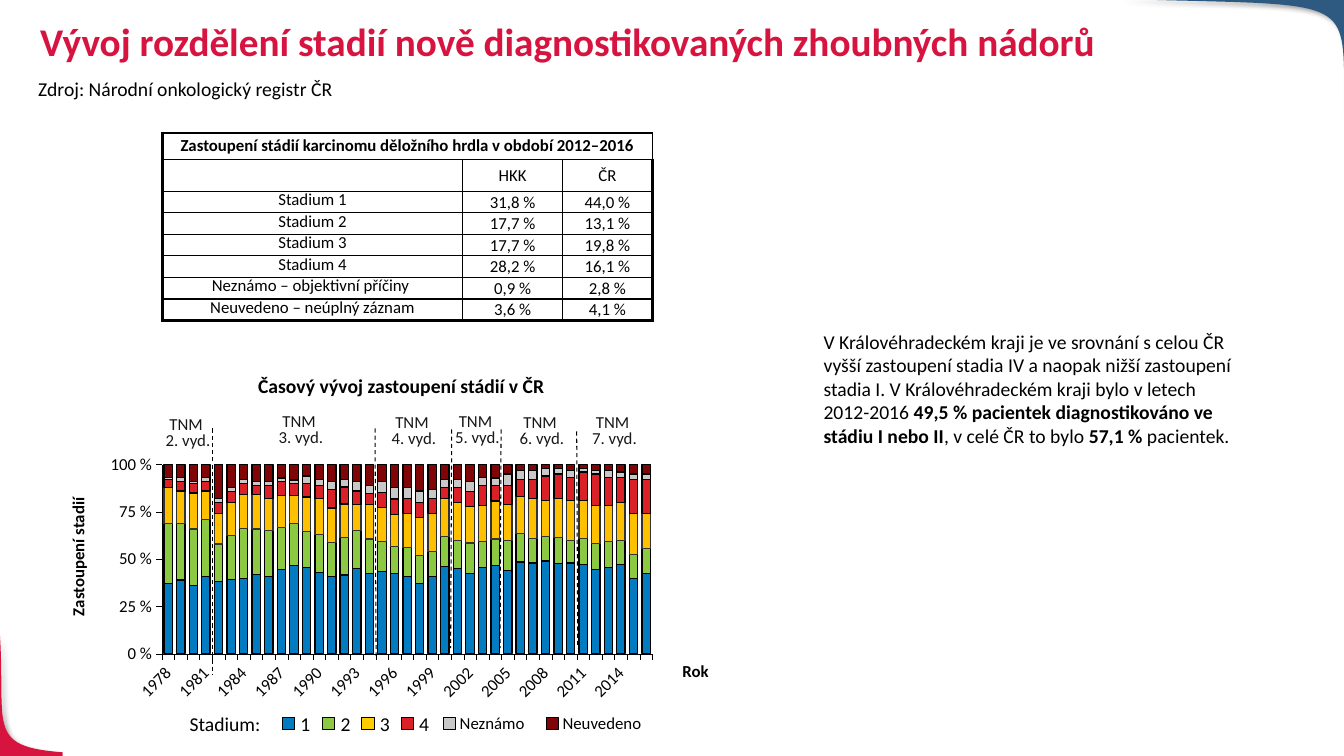
from lxml import etree
from pptx import Presentation
from pptx.chart.data import CategoryChartData
from pptx.dml.color import RGBColor
from pptx.enum.chart import XL_CHART_TYPE, XL_TICK_MARK
from pptx.enum.dml import MSO_LINE
from pptx.enum.shapes import MSO_CONNECTOR, MSO_SHAPE
from pptx.enum.text import MSO_ANCHOR, PP_ALIGN
from pptx.oxml import parse_xml
from pptx.oxml.ns import nsdecls, qn
from pptx.util import Inches, Pt

LEFT, CENTER = PP_ALIGN.LEFT, PP_ALIGN.CENTER
TOP, MIDDLE, BOTTOM = MSO_ANCHOR.TOP, MSO_ANCHOR.MIDDLE, MSO_ANCHOR.BOTTOM
RECTANGLE, STRAIGHT, DASH = MSO_SHAPE.RECTANGLE, MSO_CONNECTOR.STRAIGHT, MSO_LINE.DASH
STACKED, TICK_OUTSIDE = XL_CHART_TYPE.COLUMN_STACKED_100, XL_TICK_MARK.OUTSIDE
BLACK, WHITE, RED, BLUE, DARK = "000000", "FFFFFF", "D71440", "2E5980", "181717"
NORMAL_INSETS, TIGHT_INSETS, NO_INSETS = (0.1, 0.05, 0.1, 0.05), (0.01, 0.01, 0.01, 0), (0, 0, 0, 0)

YEARS = range(1978, 2017)
STAGES = [
    ("037BC1", BLACK, [37, 39, 36, 41, 38, 39, 40, 42, 41, 44, 46, 45, 43, 41, 42, 45, 42, 44, 42, 41, 37, 41, 46,
                       45, 42, 46, 46, 44, 49, 48, 49, 48, 48, 47, 45, 46, 47, 40, 43]),
    ("8CC841", BLACK, [32, 30, 30, 30, 20, 23, 27, 24, 24, 22, 22, 19, 20, 18, 20, 20, 18, 16, 14, 15, 15, 13, 16,
                       15, 16, 14, 14, 16, 15, 13, 13, 14, 12, 14, 14, 14, 13, 13, 13]),
    ("FFC000", "333333", [19, 17, 19, 15, 16, 17, 18, 18, 17, 17, 15, 18, 19, 18, 18, 14, 18, 18, 17, 18, 20, 20,
                          20, 20, 19, 19, 20, 19, 20, 21, 19, 21, 21, 20, 20, 19, 20, 22, 19]),
    ("DA2128", BLACK, [4, 5, 5, 5, 6, 6, 6, 5, 7, 7, 6, 7, 7, 10, 9, 7, 6, 8, 8, 8, 8, 8, 6, 8, 8, 11, 8, 10, 9,
                       10, 13, 13, 12, 15, 17, 15, 13, 18, 18]),
    ("C8C8C8", BLACK, [1, 2, 1, 2, 2, 2, 2, 2, 2, 2, 2, 4, 3, 4, 4, 5, 4, 6, 6, 6, 6, 5, 4, 4, 5, 4, 4, 6, 5, 5,
                       4, 3, 4, 2, 2, 4, 3, 3, 3]),
    ("7F0506", BLACK, [7, 7, 9, 7, 18, 12, 8, 9, 9, 7, 8, 6, 8, 9, 8, 9, 11, 9, 12, 12, 14, 13, 8, 8, 9, 7, 7, 5,
                       3, 3, 2, 2, 3, 2, 3, 3, 4, 5, 5]),
]
TABLE_ROWS = [
    ("Zastoupení stádií karcinomu děložního hrdla v období 2012–2016", "", ""),
    ("", "HKK", "ČR"),
    ("Stadium 1", "31,8 %", "44,0 %"),
    ("Stadium 2", "17,7 %", "13,1 %"),
    ("Stadium 3", "17,7 %", "19,8 %"),
    ("Stadium 4", "28,2 %", "16,1 %"),
    ("Neznámo – objektivní příčiny ", "0,9 %", "2,8 %"),
    ("Neuvedeno – neúplný záznam", "3,6 %", "4,1 %"),
]
EDITIONS = [(1.61, 4.14, 0.51), (2.73, 4.11, 0.51), (3.85, 4.12, 0.51),
            (4.48, 4.11, 0.51), (5.12, 4.12, 0.51), (5.78, 4.12, 0.63)]
DIVIDERS = [(4.97, 4.26, 4.96, 6.43), (4.48, 4.26, 4.47, 6.43), (5.72, 4.28, 5.73, 6.43),
            (2.11, 4.25, 2.11, 6.7), (3.72, 4.25, 3.73, 6.51)]
NUMBER_KEYS = [(2.8, "037BC1"), (3.2, "8CC841"), (3.59, "FFCC00"), (3.98, "DA2128")]
WORD_KEYS = [(4.4, "C8C8C8", "Neznámo"), (5.42, "7F0506", "Neuvedeno")]
COMMENT = [
    ("V Královéhradeckém kraji je ve srovnání s celou ČR vyšší zastoupení stadia IV a naopak nižší zastoupení "
     "stadia I. V Královéhradeckém kraji bylo v letech 2012-2016 ", False),
    ("49,5 % pacientek diagnostikováno ve stádiu I nebo II", True),
    (", v celé ČR to bylo ", False), ("57,1 %", True), (" pacientek.", False),
]


def color(value):
    return RGBColor.from_string(value)


def set_insets(target, insets):
    target.margin_left, target.margin_top, target.margin_right, target.margin_bottom = map(Inches, insets)


class SlideBuilder:
    font_name = "Calibri"

    def __init__(self, slide):
        self.slide = slide
        self.shapes = slide.shapes

    def style_font(self, font, size, fill=BLACK, bold=False):
        font.name, font.size, font.bold = self.font_name, Pt(size), bold
        font.color.rgb = color(fill)

    def corner(self, curve, tip, fill):
        """Fill the area between a cubic curve and the slide corner at tip."""
        points = []
        for step in range(41):
            t = step / 40
            weights = ((1 - t) ** 3, 3 * t * (1 - t) ** 2, 3 * t * t * (1 - t), t ** 3)
            points.append(tuple(Inches(sum(w * point[axis] for w, point in zip(weights, curve)))
                                for axis in (0, 1)))
        builder = self.shapes.build_freeform(*points[0])
        builder.add_line_segments(points[1:] + [tuple(map(Inches, tip))], close=True)
        shape = builder.convert_to_shape()
        shape.fill.solid()
        shape.fill.fore_color.rgb = color(fill)
        shape.line.fill.background()
        shape._element.spPr.append(parse_xml(
            f'<a:effectLst {nsdecls("a")}><a:outerShdw blurRad="50800" dist="38100" dir="2700000">'
            '<a:srgbClr val="000000"><a:alpha val="40000"/></a:srgbClr></a:outerShdw></a:effectLst>'))

    def rectangle(self, left, top, width, height, fill, outlined=False):
        shape = self.shapes.add_shape(RECTANGLE, *map(Inches, (left, top, width, height)))
        shape.shadow.inherit = False
        shape.fill.solid()
        shape.fill.fore_color.rgb = color(fill)
        if outlined:
            shape.line.color.rgb = color(BLACK)
            shape.line.width = Pt(0.75)
        else:
            shape.line.fill.background()

    def text(self, box, content, size, fill=BLACK, bold=False, align=LEFT, spacing=None,
             insets=NORMAL_INSETS, wrap=True, rotation=0):
        """Add a text box; content is a string or a list of (text, bold) runs."""
        shape = self.shapes.add_textbox(*map(Inches, box))
        shape.rotation = rotation
        frame = shape.text_frame
        frame.word_wrap = wrap
        set_insets(frame, insets)
        if isinstance(content, str):
            frame.text = content
        else:
            for words, _ in content:
                frame.paragraphs[0].add_run().text = words
        for paragraph in frame.paragraphs:
            paragraph.alignment = align
            paragraph.line_spacing = spacing
            for index, run in enumerate(paragraph.runs):
                self.style_font(run.font, size, fill, bold if isinstance(content, str) else content[index][1])

    def dashed_line(self, *ends):
        connector = self.shapes.add_connector(STRAIGHT, *map(Inches, ends))
        connector.line.color.rgb = color(BLACK)
        connector.line.width = Pt(0.75)
        connector.line.dash_style = DASH
        etree.SubElement(connector._element.spPr, qn("a:effectLst"))

    def table(self, left, top, widths, heights, rows):
        frame = self.shapes.add_table(len(rows), len(widths), *map(Inches, (left, top, sum(widths), sum(heights))))
        table = frame.table
        table.first_row = table.horz_banding = False
        for column, width in zip(table.columns, widths):
            column.width = Inches(width)
        for row, height in zip(table.rows, heights):
            row.height = Inches(height)
        table.cell(0, 0).merge(table.cell(0, len(widths) - 1))
        for r, row in enumerate(rows):
            for c, words in enumerate(row):
                self.table_cell(table.cell(r, c), words, r, c)
                self.cell_borders(table.cell(r, c), (c == 0, c == len(widths) - 1, r == 0, r == len(rows) - 1))

    def table_cell(self, cell, words, r, c):
        is_label = c == 0 and words != ""
        set_insets(cell, NORMAL_INSETS if is_label else TIGHT_INSETS)
        cell.vertical_anchor = (TOP, MIDDLE)[r] if r < 2 else BOTTOM
        cell.fill.background()
        cell.text = words
        paragraph = cell.text_frame.paragraphs[0]
        paragraph.alignment = CENTER
        if is_label:
            paragraph.line_spacing = 0.8 if r == 0 else 0.55
        for run in paragraph.runs:
            self.style_font(run.font, 12, bold=r == 0)

    def cell_borders(self, cell, on_edge):
        """Draw the borders, thicker where on_edge (left, right, top, bottom) is true."""
        properties = cell._tc.get_or_add_tcPr()
        for index, (side, outer) in enumerate(zip("LRTB", on_edge)):
            properties.insert(index, parse_xml(
                f'<a:ln{side} {nsdecls("a")} w="{Pt(2.25 if outer else 1)}"><a:solidFill>'
                f'<a:srgbClr val="{BLACK}"/></a:solidFill></a:ln{side}>'))

    def stage_chart(self, box, layout):
        data = CategoryChartData()
        data.categories = [str(year) for year in YEARS]
        for number, (_, _, values) in enumerate(STAGES, 1):
            data.add_series(f"Series {number}", values)
        chart = self.shapes.add_chart(STACKED, *map(Inches, box), data).chart
        chart.has_legend = chart.has_title = False
        self.style_font(chart.font, 12)
        plot = chart.plots[0]
        plot.gap_width, plot.overlap, plot.vary_by_categories = 50, 100, False
        for series, (fill, line, _) in zip(plot.series, STAGES):
            series.format.fill.solid()
            series.format.fill.fore_color.rgb = color(fill)
            series.format.line.color.rgb = color(line)
            series.format.line.width = Pt(0.92)
        for axis in (chart.category_axis, chart.value_axis):
            axis.has_major_gridlines = False
            axis.major_tick_mark = TICK_OUTSIDE
            axis.format.line.color.rgb = color(BLACK)
            axis.format.line.width = Pt(0.23)
            self.style_font(axis.tick_labels.font, 12)
        chart.value_axis.major_unit = 0.25
        chart.value_axis.tick_labels.number_format = "0\\ %"
        chart.value_axis.tick_labels.number_format_is_linked = False
        category = chart.category_axis._element
        category.find(qn("c:txPr")).find(qn("a:bodyPr")).set("rot", "-2700000")
        category.find(qn("c:noMultiLvlLbl")).addprevious(
            parse_xml(f'<c:tickLblSkip {nsdecls("c")} val="3"/>'))
        area = chart._chartSpace.chart.plotArea
        for old in area.findall(qn("c:layout")):
            area.remove(old)
        sizes = "".join(f'<c:{name} val="{value}"/>' for name, value in zip("xywh", layout))
        area.insert(0, parse_xml(
            f'<c:layout {nsdecls("c")}><c:manualLayout><c:layoutTarget val="inner"/><c:xMode val="edge"/>'
            f'<c:yMode val="edge"/>{sizes}</c:manualLayout></c:layout>'))


def main():
    presentation = Presentation()
    presentation.slide_width, presentation.slide_height = Inches(13.33), Inches(7.5)
    page = SlideBuilder(presentation.slides.add_slide(presentation.slide_layouts[6]))

    page.corner([(2.13, 7.51), (-0.34, 7.44), (0.08, 7.59), (0, 6.3)], (-0.01, 7.51), RED)
    page.corner([(11.11, -0.01), (13.7, 0.07), (13.26, -0.1), (13.35, 1.42)], (13.35, -0.01), BLUE)
    page.rectangle(0.62, 6.86, 12.72, 0.65, WHITE)

    page.stage_chart((0.74, 4.43, 5.89, 2.76), (0.147, 0.065, 0.826, 0.68))
    page.table(1.61, 1.32, (2.98, 0.99, 0.89), [0.26, 0.31] + [0.21] * 6, TABLE_ROWS)
    page.text((0.28, 0.71, 3.58, 0.34), "Zdroj: Národní onkologický registr ČR", 14)

    for edition, (left, top, width) in enumerate(EDITIONS, 2):
        page.text((left, top, width, 0.33), f"TNM \n{edition}. vyd.", 12, DARK,
                  align=CENTER, spacing=0.8, insets=NO_INSETS)
    for ends in DIVIDERS:
        page.dashed_line(*ends)
    page.text((-0.12, 5.17, 1.78, 0.3), "Zastoupení stadií", 12, bold=True, rotation=270)

    page.text((1.88, 7.06, 0.9, 0.24), "Stadium:", 14, insets=NO_INSETS)
    for number, (left, fill) in enumerate(NUMBER_KEYS, 1):
        page.rectangle(left, 7.12, 0.12, 0.12, fill, outlined=True)
        page.text((left + 0.08, 7.01, 0.3, 0.34), str(number), 14, wrap=False)
    for left, fill, label in WORD_KEYS:
        page.rectangle(left, 7.12, 0.12, 0.12, fill, outlined=True)
        page.text((left + 0.16, 7.07, 0.94, 0.2), label, 12, insets=NO_INSETS)
    page.text((6.67, 6.51, 1.09, 0.3), "Rok", 12, bold=True)

    page.text((0.3, 0.18, 11.5, 0.69), "Vývoj rozdělení stadií nově diagnostikovaných zhoubných nádorů", 28, RED,
              bold=True, spacing=0.9)
    page.text((8.07, 3.22, 4.37, 1.28), COMMENT, 14)
    page.text((2.19, 3.66, 3.58, 0.34), "Časový vývoj zastoupení stádií v ČR", 14, bold=True, align=CENTER)

    presentation.save("out.pptx")


if __name__ == "__main__":
    main()
